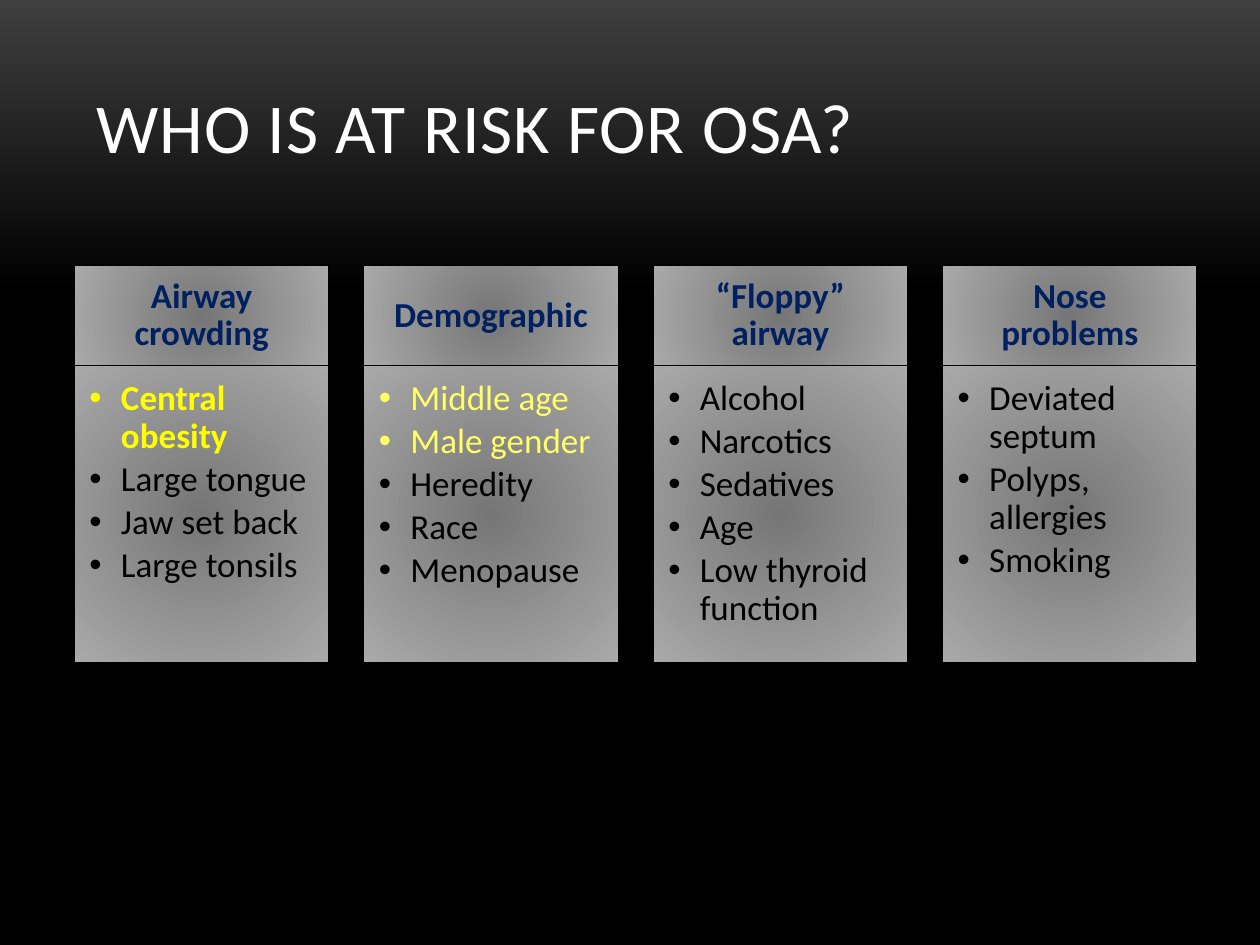
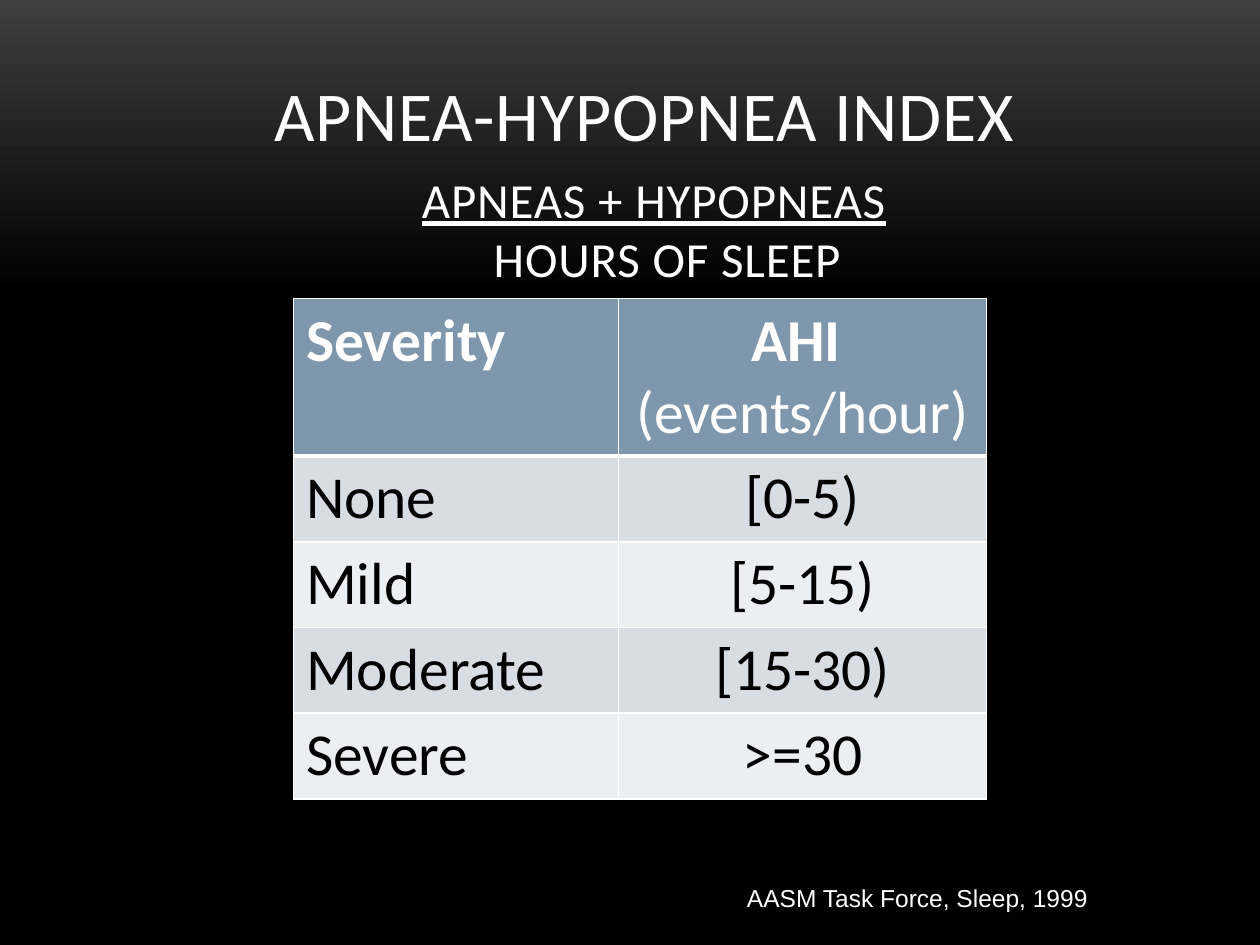
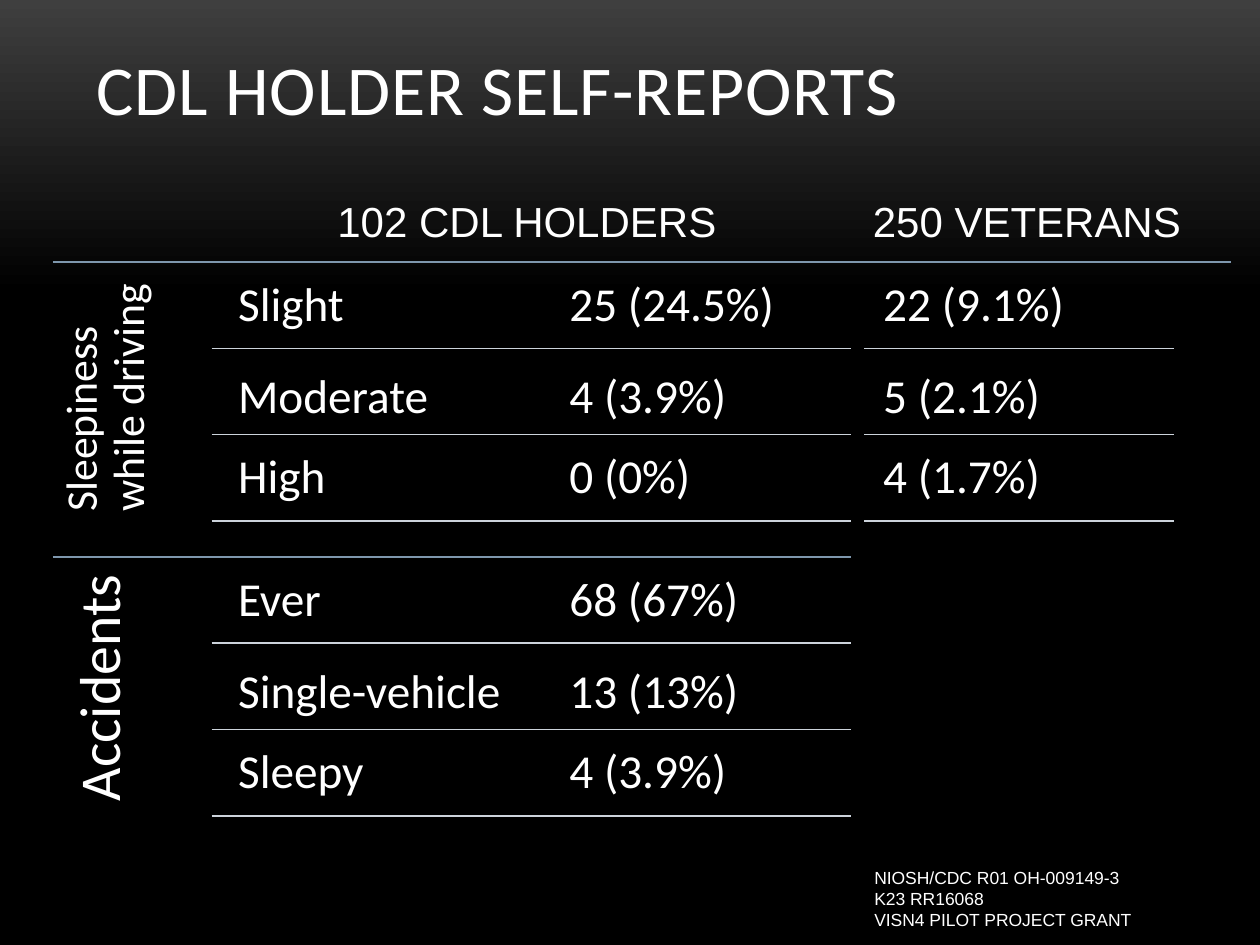
from lxml import etree
from pptx import Presentation
from pptx.dml.color import RGBColor
from pptx.enum.shapes import MSO_CONNECTOR, MSO_SHAPE
from pptx.enum.text import MSO_ANCHOR, PP_ALIGN
from pptx.oxml.ns import qn
from pptx.util import Inches, Pt

LEFT, CENTER = PP_ALIGN.LEFT, PP_ALIGN.CENTER
TOP, MIDDLE, BOTTOM = MSO_ANCHOR.TOP, MSO_ANCHOR.MIDDLE, MSO_ANCHOR.BOTTOM
RECTANGLE, STRAIGHT = MSO_SHAPE.RECTANGLE, MSO_CONNECTOR.STRAIGHT

COLORS = {
    "white": "FFFFFF", "black": "000000", "charcoal": "3F3F3F",
    "card_center": "767676", "card_edge": "A9A9A9", "navy": "002060",
    "yellow": "FFFF00", "pale_yellow": "FFFF66",
    "steel": "7E97AD", "rule": "CCD3DB",
    "band_dark": "D8DDE3", "band_light": "ECEFF1",
}

# Content: a paragraph is a string, or a (string, format) pair
KEY_RISK = {"color": "yellow", "bold": True}
COMMON_RISK = {"color": "pale_yellow"}
RISKS = [
    ("Airway crowding", [("Central obesity", KEY_RISK), "Large tongue",
                         "Jaw set back", "Large tonsils"]),
    ("Demographic", [("Middle age", COMMON_RISK), ("Male gender", COMMON_RISK),
                     "Heredity", "Race", "Menopause"]),
    ("“Floppy” airway", ["Alcohol", "Narcotics", "Sedatives", "Age",
                         "Low thyroid function"]),
    ("Nose problems", ["Deviated septum", "Polyps, allergies", "Smoking"]),
]
SEVERITY = [
    (["Severity"], ["AHI ", ("(events/hour)", {"bold": False})]),
    (["None"], ["[0-5)"]),
    (["Mild"], ["[5-15)"]),
    (["Moderate"], ["[15-30)"]),
    (["Severe"], [">=30"]),
]
HOLDER_REPORTS = [
    {"label": "Sleepiness while driving", "size": 25, "inset": 0.1, "top": 2.08,
     "rows": ["Slight\t25 (24.5%)", "Moderate\t4 (3.9%)", "High\t0 (0%)"]},
    {"label": "Accidents", "size": 33, "inset": 0.14, "top": 4.42,
     "rows": ["Ever\t68 (67%)", "Single-vehicle\t13 (13%)", "Sleepy\t4 (3.9%)"]},
]
VETERAN_REPORTS = ["22 (9.1%)", "5 (2.1%)", "4 (1.7%)"]
GRANTS = ["NIOSH/CDC R01 OH-009149-3", "K23 RR16068", "VISN4 PILOT PROJECT GRANT"]


def rgb(name):
    return RGBColor.from_string(COLORS[name])


def gradient(stops, radial=False):
    """Build a gradient fill from (percent, colour name) stops."""
    fill = etree.Element(qn("a:gradFill"), rotWithShape="1")
    stop_list = etree.SubElement(fill, qn("a:gsLst"))
    for percent, name in stops:
        stop = etree.SubElement(stop_list, qn("a:gs"), pos=str(percent * 1000))
        etree.SubElement(stop, qn("a:srgbClr"), val=COLORS[name])
    if radial:
        shade = etree.SubElement(fill, qn("a:path"), path="circle")
        etree.SubElement(shade, qn("a:fillToRect"), l="100000", t="100000",
                         r="100000", b="100000")
    else:
        etree.SubElement(fill, qn("a:lin"), ang="5400000", scaled="0")
    return fill


def replace_solid(element, fill):
    solid = element.find(qn("a:solidFill"))
    element.replace(solid, fill)


def add_paragraph(para, text, size=20, font="Calibri", color="white", bold=False,
                  underline=False, tracking=0, align=LEFT, line=None, after=0,
                  bullet=False, indent=0, tab=0):
    para.alignment = align
    para.space_after = Pt(after)
    if line:
        para.line_spacing = line
    properties = para._p.get_or_add_pPr()
    if indent:
        properties.set("marL", str(Inches(indent)))
    if bullet:
        properties.set("indent", str(-Inches(indent)))
        etree.SubElement(properties, qn("a:buFont"), typeface="Arial")
        etree.SubElement(properties, qn("a:buChar"), char="•")
    if tab:
        tabs = etree.SubElement(properties, qn("a:tabLst"))
        etree.SubElement(tabs, qn("a:tab"), pos=str(Inches(tab)), algn="l")
    span = para.add_run()
    span.text = text
    span.font.size, span.font.name = Pt(size), font
    span.font.bold, span.font.underline = bold, underline
    span.font.color.rgb = rgb(color)
    if tracking:
        span._r.get_or_add_rPr().set("spc", str(int(tracking * 100)))


def write_text(frame, paragraphs, **style):
    for index, item in enumerate(paragraphs):
        text, changes = (item, {}) if isinstance(item, str) else item
        para = frame.add_paragraph() if index else frame.paragraphs[0]
        add_paragraph(para, text, **{**style, **changes})


def set_frame(frame, anchor=TOP, insets=(0.1, 0.05, 0.1, 0.05), wrap=True):
    frame.word_wrap, frame.vertical_anchor = wrap, anchor
    (frame.margin_left, frame.margin_top,
     frame.margin_right, frame.margin_bottom) = map(Inches, insets)


def add_text(page, paragraphs, place, anchor=TOP, insets=(0.1, 0.05, 0.1, 0.05),
             wrap=True, upward=False, **style):
    frame = page.shapes.add_textbox(*map(Inches, place)).text_frame
    set_frame(frame, anchor, insets, wrap)
    if upward:
        frame._txBody.bodyPr.set("vert", "vert270")
    write_text(frame, paragraphs, **style)


def add_title(page, text, left=0.67, top=0.13, width=8.67, height=1.25):
    add_text(page, [text], (left, top, width, height), BOTTOM, size=40, tracking=0.5)


def add_card(page, paragraphs, place, anchor, insets, **style):
    card = page.shapes.add_shape(RECTANGLE, *map(Inches, place))
    card.shadow.inherit = False
    card.fill.solid()
    replace_solid(card._element.spPr,
                  gradient([(0, "card_center"), (100, "card_edge")], radial=True))
    card.line.color.rgb, card.line.width = rgb("black"), Pt(0.75)
    set_frame(card.text_frame, anchor, insets)
    write_text(card.text_frame, paragraphs, line=0.9, **style)


def add_rule(page, left, right, top, color):
    rule = page.shapes.add_connector(STRAIGHT, *map(Inches, (left, top, right, top)))
    rule.line.color.rgb, rule.line.width = rgb(color), Pt(0.85)
    etree.SubElement(rule._element.spPr, qn("a:effectLst"))


def set_borders(cell, **widths):
    properties = cell._tc.get_or_add_tcPr()
    for index, side in enumerate("LRTB"):
        border = etree.Element(qn(f"a:ln{side}"), w=str(Pt(widths.get(side, 1))))
        fill = etree.SubElement(border, qn("a:solidFill"))
        etree.SubElement(fill, qn("a:srgbClr"), val=COLORS["white"])
        properties.insert(index, border)


def build_risks(page):
    add_title(page, "WHO IS AT RISK FOR OSA?")
    left, top, width, pitch = 0.59, 2.11, 2.02, 2.297
    head_height, body_height = 0.79, 2.36
    for index, (heading, items) in enumerate(RISKS):
        x = left + index * pitch
        add_card(page, [heading], (x, top, width, head_height), MIDDLE,
                 (0.16, 0.09, 0.16, 0.09), color="navy", bold=True, align=CENTER)
        add_card(page, items, (x, top + head_height, width, body_height), TOP,
                 (0.12, 0.12, 0.16, 0.17), color="black", bullet=True,
                 indent=0.25, after=3)


def build_index(page):
    # Formula
    add_title(page, "APNEA-HYPOPNEA INDEX", 2.08, 0.5, 6.17, 0.78)
    add_text(page, [("APNEAS + HYPOPNEAS", {"underline": True}),
                    ("HOURS OF SLEEP", {"indent": 0.57})],
             (3.25, 1.08, 3.92, 1.25), BOTTOM, size=28, tracking=0.5)
    # Severity table
    head_height, row_height, widths = 1.25, 0.68, (2.58, 2.92)
    place = (2.33, 2.37, sum(widths), head_height + 4 * row_height)
    table = page.shapes.add_table(len(SEVERITY), 2, *map(Inches, place)).table
    for column, width in zip(table.columns, widths):
        column.width = Inches(width)
    for index, values in enumerate(SEVERITY):
        header = index == 0
        table.rows[index].height = Inches(head_height if header else row_height)
        band = "steel" if header else "band_dark" if index % 2 else "band_light"
        for column, (paragraphs, align) in enumerate(zip(values, (LEFT, CENTER))):
            cell = table.cell(index, column)
            cell.fill.solid()
            cell.fill.fore_color.rgb = rgb(band)
            set_borders(cell, T=3 if index == 1 else 1, B=3 if header else 1)
            write_text(cell.text_frame, paragraphs, size=34, align=align,
                       bold=header, color="white" if header else "black")
    # Citation
    add_text(page, ["AASM Task Force, Sleep, 1999"], (5.83, 6.96, 2.92, 0.34),
             wrap=False, size=14, font="Arial")


def add_report_rows(page, rows, top, text_left, text_width, rule_left):
    right = text_left + text_width
    for index, (row, offset) in enumerate(zip(rows, (0.04, 0.77, 1.4))):
        add_text(page, [row], (text_left, top + offset, text_width, 0.65),
                 insets=(0.11,) * 4, size=27, line=0.9, tab=2.63)
        add_rule(page, rule_left, right, top + 0.685 * (index + 1), "rule")


def build_reports(page):
    add_title(page, "CDL HOLDER SELF-REPORTS", top=-0.17)
    # Column headings
    for text, left, width in (("102 CDL HOLDERS", 2.58, 3.24),
                              ("250 VETERANS", 6.83, 2.67)):
        add_text(page, [text], (left, 1.5, width, 0.5), wrap=False, size=24, font="Arial")
    # Licence holders
    for group in HOLDER_REPORTS:
        top = group["top"]
        add_rule(page, 0.42, 6.75, top, "steel")
        add_text(page, [group["label"]], (0.42, top, 1.27, 2.08), upward=True,
                 insets=(group["inset"],) * 4, size=group["size"], line=0.9)
        add_report_rows(page, group["rows"], top, 1.78, 4.97, 1.68)
    # Veterans
    add_rule(page, 6.69, 9.77, 2.08, "steel")
    add_report_rows(page, VETERAN_REPORTS, 2.08, 6.9, 2.42, 6.86)
    # Funding
    add_text(page, GRANTS, (6.84, 6.83, 2.41, 0.61), size=10, font="Arial")


def main():
    deck = Presentation()
    deck.slide_width, deck.slide_height = Inches(10), Inches(7.5)
    # Shared background
    master = deck.slide_master
    master.background.fill.solid()
    replace_solid(master.element.find(".//" + qn("p:bgPr")),
                  gradient([(0, "charcoal"), (31, "black"), (100, "black")]))
    for build in (build_risks, build_index, build_reports):
        build(deck.slides.add_slide(deck.slide_layouts[6]))
    deck.save("out.pptx")


if __name__ == "__main__":
    main()
